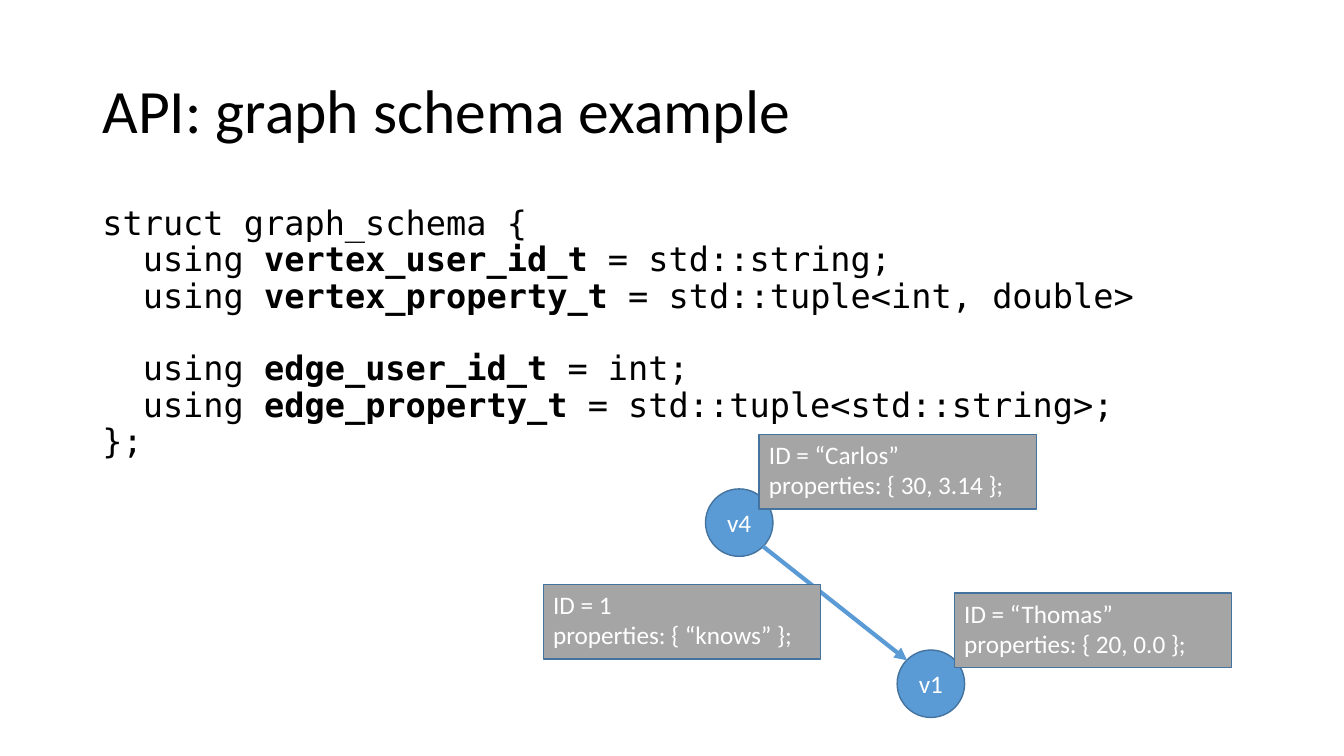
from dataclasses import dataclass
from lxml import etree
from pptx import Presentation
from pptx import util as u
from pptx.dml.color import RGBColor
from pptx.enum import shapes, text
from pptx.oxml.ns import qn


@dataclass(frozen=True)
class Theme:
    ink: RGBColor = RGBColor.from_string("000000")
    light: RGBColor = RGBColor.from_string("FFFFFF")
    vertex: RGBColor = RGBColor.from_string("5B9BD5")
    outline: RGBColor = RGBColor.from_string("43739E")
    label: RGBColor = RGBColor.from_string("A5A5A5")
    sans: str = "Calibri"
    mono: str = "DejaVu Sans Mono"
    title: u.Pt = u.Pt(44)
    code: u.Pt = u.Pt(24)
    body: u.Pt = u.Pt(18)


theme = Theme()


def set_font(p, name, size, color):
    p.font.name = name
    p.font.size = size
    p.font.color.rgb = color


def add_box(kind, x, y, w, h, fill, content, align, anchor):
    sp = s.shapes.add_shape(kind, u.Cm(x), u.Cm(y), u.Cm(w), u.Cm(h))
    sp.shadow.inherit = False
    sp.fill.solid()
    sp.fill.fore_color.rgb = fill
    sp.line.color.rgb = theme.outline
    sp.line.width = u.Pt(1)
    tf = sp.text_frame
    tf.text = content
    tf.vertical_anchor = anchor
    p = tf.paragraphs[0]
    p.alignment = align
    set_font(p, theme.sans, theme.body, theme.light)


prs = Presentation()
prs.slide_width, prs.slide_height = u.Cm(33.87), u.Cm(19.05)
s = prs.slides.add_slide(prs.slide_layouts[5])

title = s.shapes.title
title.left, title.top, title.width, title.height = u.Cm(2.33), u.Cm(1.01), u.Cm(29.21), u.Cm(3.68)
tf = title.text_frame
tf.text = "API: graph schema example"
tf.auto_size = text.MSO_AUTO_SIZE.NONE
tf.vertical_anchor = text.MSO_ANCHOR.MIDDLE
p = tf.paragraphs[0]
p.alignment = text.PP_ALIGN.LEFT
p.line_spacing = 0.9
set_font(p, theme.sans, theme.title, theme.ink)

code = [
    (0, 0, "struct graph_schema {", "", ""),
    (1, 0, "using ", "vertex_user_id_t", " = std::string;"),
    (1, 0, "using ", "vertex_property_t", " = std::tuple<int, double>"),
    (1, 26, "using ", "edge_user_id_t", " = int;"),
    (1, 0, "using ", "edge_property_t", " = std::tuple<std::string>;"),
    (0, 0, "};", "", ""),
]
tf = s.shapes.add_textbox(u.Cm(2.33), u.Cm(5.08), u.Cm(29.21), u.Cm(12.09)).text_frame
tf.word_wrap = True
for i, (depth, gap, before, name, after) in enumerate(code):
    p = tf.paragraphs[0] if i == 0 else tf.add_paragraph()
    p.line_spacing = 0.9
    p.space_before = u.Pt(gap)
    set_font(p, theme.mono, theme.code, theme.ink)
    p._p.get_or_add_pPr().set("marL", str(u.Cm(1.02 * depth)))
    for part, bold in ((before, False), (name, True), (after, False)):
        if part:
            r = p.add_run()
            r.text = part
            r.font.bold = bold

for name, x, y in (("v4", 17.78, 12.32), ("v1", 22.61, 16.38)):
    add_box(shapes.MSO_SHAPE.OVAL, x, y, 1.7, 1.7, theme.vertex, name,
            text.PP_ALIGN.CENTER, text.MSO_ANCHOR.MIDDLE)

edge = s.shapes.add_connector(
    shapes.MSO_CONNECTOR.STRAIGHT, u.Cm(19.23), u.Cm(13.77), u.Cm(22.86), u.Cm(16.64))
edge.line.color.rgb = theme.vertex
edge.line.width = u.Pt(3)
etree.SubElement(edge.line._get_or_add_ln(), qn("a:tailEnd"), type="triangle")
etree.SubElement(edge._element.spPr, qn("a:effectLst"))

labels = [
    ("ID = “Carlos”\vproperties: { 30, 3.14 };", 19.13, 10.95),
    ("ID = “Thomas”\vproperties: { 20, 0.0 };", 24.05, 14.94),
    ("ID = 1\vproperties: { “knows” };", 13.69, 14.73),
]
for content, x, y in labels:
    add_box(shapes.MSO_SHAPE.RECTANGLE, x, y, 6.99, 1.88, theme.label, content,
            text.PP_ALIGN.LEFT, text.MSO_ANCHOR.TOP)

prs.save("out.pptx")
